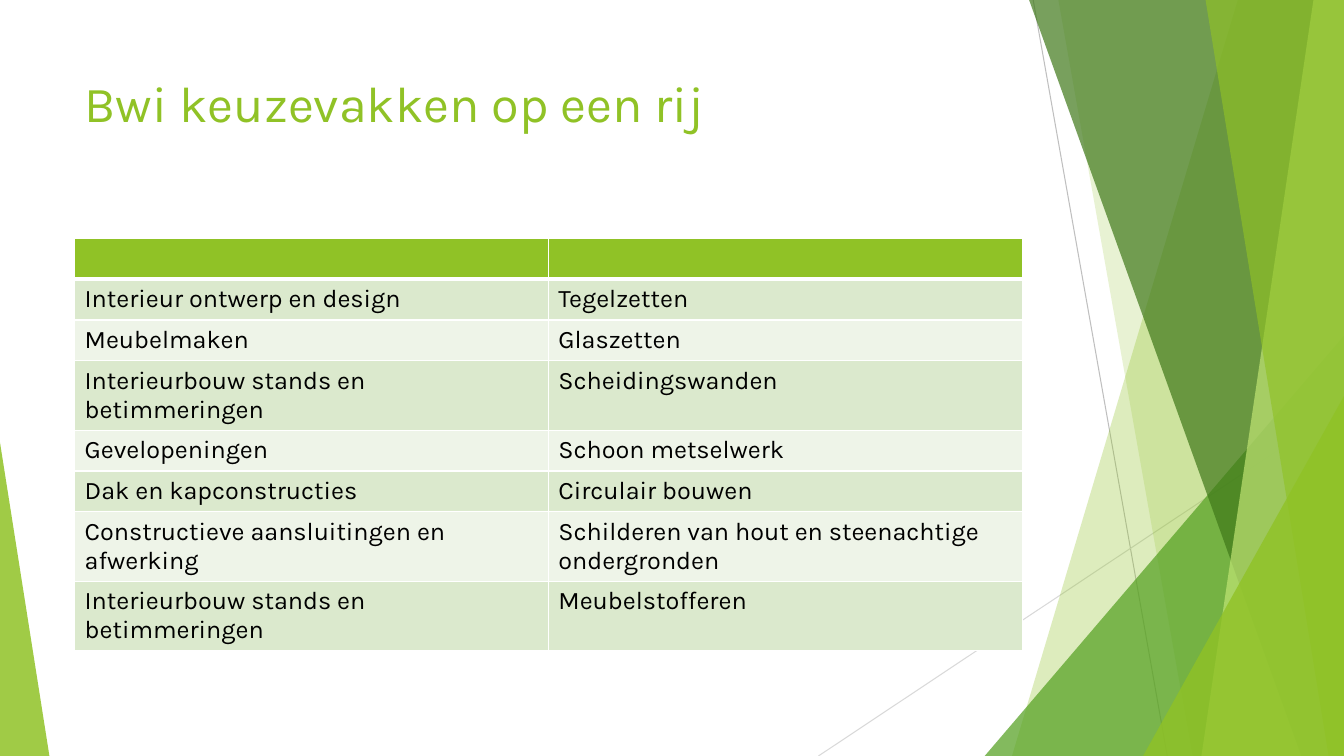
"""Build the slide that lists the Bwi elective subjects in a table."""
from dataclasses import dataclass

from pptx import Presentation
from pptx.dml.color import RGBColor
from pptx.enum.shapes import MSO_CONNECTOR as Connector, MSO_SHAPE as Preset
from pptx.enum.text import MSO_ANCHOR as Anchor, PP_ALIGN as Align
from pptx.oxml.ns import qn
from pptx.util import Pt
from lxml.etree import SubElement


@dataclass(frozen=True)
class Theme:
    font: str = "Karla"
    title_size: int = 36
    body_size: int = 18
    line_width: float = 0.75
    border_width: float = 1
    header_border_width: float = 3
    text: str = "000000"
    border: str = "FFFFFF"
    lime: str = "90C226"
    pale_lime: str = "C0E474"
    green: str = "54A021"
    dark_green: str = "3F7819"
    row_fills: tuple = ("DBE9CD", "EEF4E8")


@dataclass(frozen=True)
class Band:
    top_x: float
    bottom_x: float
    color: str
    opacity: int


@dataclass(frozen=True)
class Corner:
    left: float
    top: float
    width: float
    apex: int
    color: str
    opacity: int


THEME = Theme()
WIDTH, HEIGHT = 960, 540
TITLE = "Bwi keuzevakken op een rij"
TITLE_BOX = (53.3, 48.2, 676.8, 69.1)
TABLE_LEFT, TABLE_TOP, COLUMN_WIDTH, ROW_HEIGHT = 53.3, 170.2, 338.4, 29.2
SUBJECTS = [
    ("", ""),
    ("Interieur ontwerp en design", "Tegelzetten"),
    ("Meubelmaken", "Glaszetten"),
    ("Interieurbouw stands en betimmeringen", "Scheidingswanden"),
    ("Gevelopeningen", "Schoon metselwerk"),
    ("Dak en kapconstructies", "Circulair bouwen"),
    ("Constructieve aansluitingen en afwerking",
     "Schilderen van hout en steenachtige ondergronden"),
    ("Interieurbouw stands en betimmeringen", "Meubelstofferen"),
]
LINES = [
    ((738, 0), (833.8, HEIGHT), "BFBFBF"),
    ((WIDTH, 290.2), (584.6, HEIGHT), "D9D9D9"),
]
FACETS = [
    Band(884.2, 722.9, THEME.lime, 30),
    Band(756, 851.8, THEME.lime, 20),
    Corner(703.4, 239.8, 256.6, 1, THEME.green, 72),
    Band(735.1, 929.5, THEME.dark_green, 70),
    Band(938.2, 858.2, THEME.pale_lime, 70),
    Band(861.1, 949, THEME.lime, 65),
    Corner(816.5, 283, 143.5, 1, THEME.lime, 80),
    Corner(0, 316.1, 35.3, 0, THEME.lime, 85),
]


def points(values):
    return [Pt(value) for value in values]


def format_text(frame, size, color):
    for para in frame.paragraphs:
        para.alignment = Align.LEFT
        for span in para.runs:
            span.font.name = THEME.font
            span.font.size = Pt(size)
            span.font.bold = False
            span.font.color.rgb = RGBColor.from_string(color)


def add_line(page, start, end, color):
    line = page.shapes.add_connector(Connector.STRAIGHT, *points(start + end))
    line.line.color.rgb = RGBColor.from_string(color)
    line.line.width = Pt(THEME.line_width)
    SubElement(line.element.spPr, qn("a:effectLst"))


def add_facet(page, facet):
    if isinstance(facet, Band):
        builder = page.shapes.build_freeform(Pt(facet.top_x), 0)
        edge = [(WIDTH, 0), (WIDTH, HEIGHT), (facet.bottom_x, HEIGHT)]
        builder.add_line_segments([points(corner) for corner in edge])
        shape = builder.convert_to_shape()
    else:
        box = points((facet.left, facet.top, facet.width, HEIGHT - facet.top))
        shape = page.shapes.add_shape(Preset.ISOSCELES_TRIANGLE, *box)
        shape.adjustments[0] = facet.apex
    shape.shadow.inherit = False
    shape.line.fill.background()
    shape.fill.solid()
    shape.fill.fore_color.rgb = RGBColor.from_string(facet.color)
    color = shape.element.spPr.find(f"{qn('a:solidFill')}/{qn('a:srgbClr')}")
    SubElement(color, qn("a:alpha"), val=str(facet.opacity * 1000))


def add_title(page):
    title = page.shapes.title
    title.left, title.top, title.width, title.height = points(TITLE_BOX)
    title.text_frame.text = TITLE
    title.text_frame.word_wrap = True
    title.text_frame.vertical_anchor = Anchor.TOP
    format_text(title.text_frame, THEME.title_size, THEME.lime)
    title.element.getparent().append(title.element)


def set_borders(cell, row):
    widths = dict.fromkeys(("lnL", "lnR", "lnT", "lnB"), THEME.border_width)
    if row < 2:
        widths["lnT" if row else "lnB"] = THEME.header_border_width
    properties = cell._tc.get_or_add_tcPr()
    for side, width in widths.items():
        line = SubElement(properties, qn(f"a:{side}"), w=str(Pt(width)))
        fill = SubElement(line, qn("a:solidFill"))
        SubElement(fill, qn("a:srgbClr"), val=THEME.border)


def add_subject_table(page):
    rows, columns = len(SUBJECTS), len(SUBJECTS[0])
    box = points((TABLE_LEFT, TABLE_TOP, columns * COLUMN_WIDTH, rows * ROW_HEIGHT))
    table = page.shapes.add_table(rows, columns, *box).table
    for row, subjects in enumerate(SUBJECTS):
        color = THEME.row_fills[(row - 1) % 2] if row else THEME.lime
        for column, subject in enumerate(subjects):
            cell = table.cell(row, column)
            cell.text_frame.text = subject
            format_text(cell.text_frame, THEME.body_size, THEME.text)
            set_borders(cell, row)
            cell.fill.solid()
            cell.fill.fore_color.rgb = RGBColor.from_string(color)


def main():
    deck = Presentation()
    deck.slide_width, deck.slide_height = points((WIDTH, HEIGHT))
    page = deck.slides.add_slide(deck.slide_layouts[5])
    for line in LINES:
        add_line(page, *line)
    for facet in FACETS:
        add_facet(page, facet)
    add_title(page)
    add_subject_table(page)
    deck.save("out.pptx")


if __name__ == "__main__":
    main()
